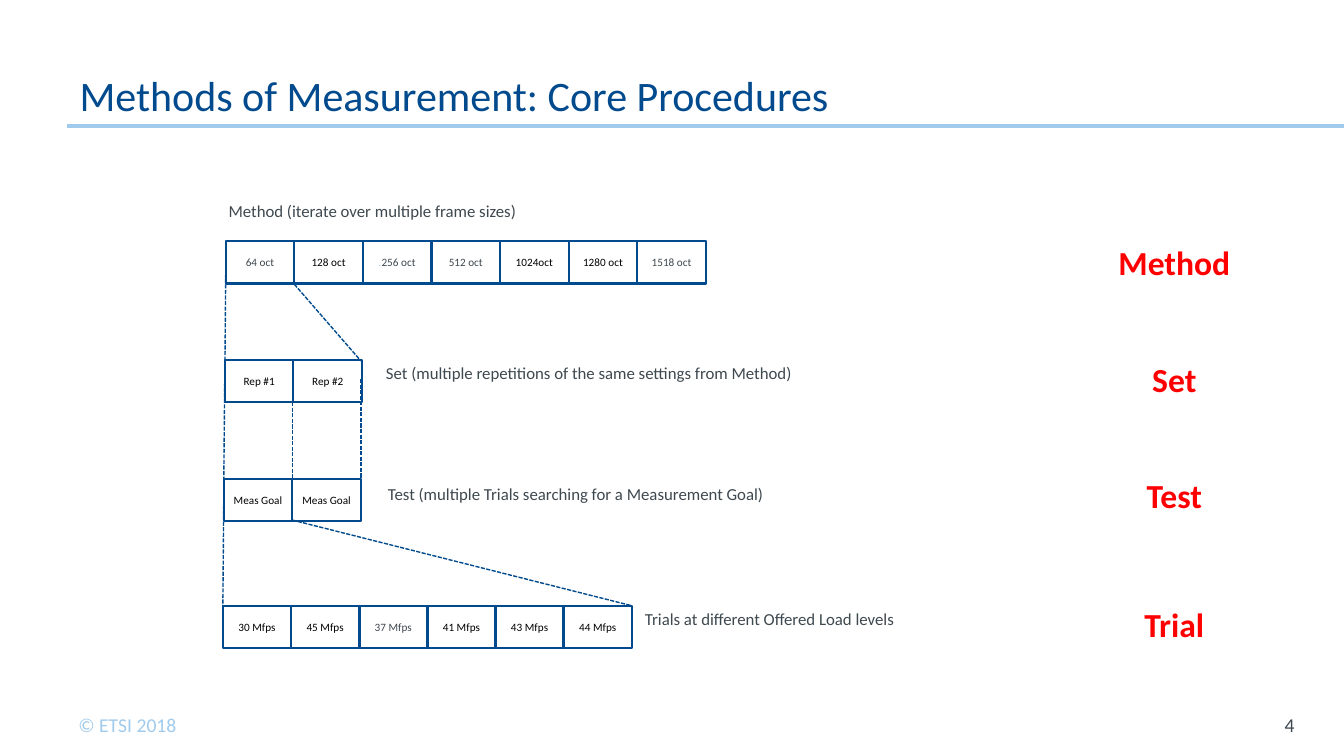
from lxml import etree
from pptx import Presentation
from pptx.dml.color import RGBColor
from pptx.enum.dml import MSO_LINE
from pptx.enum.shapes import MSO_CONNECTOR, MSO_SHAPE
from pptx.enum.text import MSO_ANCHOR, PP_ALIGN
from pptx.oxml.ns import qn
from pptx.util import Pt

LEFT, CENTER, RIGHT = PP_ALIGN.LEFT, PP_ALIGN.CENTER, PP_ALIGN.RIGHT
TOP, MIDDLE, BOTTOM = MSO_ANCHOR.TOP, MSO_ANCHOR.MIDDLE, MSO_ANCHOR.BOTTOM
RECTANGLE, STRAIGHT = MSO_SHAPE.RECTANGLE, MSO_CONNECTOR.STRAIGHT
SHORT_DASH = MSO_LINE.SQUARE_DOT

COLORS = {"navy": "004A8D", "sky": "A0CBED", "gray": "3E484F",
          "black": "000000", "red": "FF0000"}
FONT = "Calibri"
CELL_W, CELL_H = 49, 30.5
LEVEL_CENTER = 838.8

# level, label width, row left, row top, cell pitch, cells, caption, caption box
LEVELS = [
    ("Method", 95, 161.2, 172.1, 49,
     ["64 oct", "128 oct", "256 oct", "512 oct", "1024oct", "1280 oct", "1518 oct"],
     "Method (iterate over multiple frame sizes)", (156.2, 139.7, 336.2)),
    ("Set", 46.8, 160.6, 257, 49, ["Rep #1", "Rep #2"],
     "Set (multiple repetitions of the same settings from Method)",
     (268.6, 255.6, 466.6)),
    ("Test", 54.7, 159.8, 342, 49, ["Meas Goal", "Meas Goal"],
     "Test (multiple Trials searching for a Measurement Goal)",
     (270, 342, 432)),
    ("Trial", 57.6, 159.1, 432.7, 48.67,
     ["30 Mfps", "45 Mfps", "37 Mfps", "41 Mfps", "43 Mfps", "44 Mfps"],
     "Trials at different Offered Load levels", (453.6, 431.3, 298.8)),
]
LEVEL_TOPS = [169.2, 252.7, 335.5, 427.7]
GRAY_CELLS = {"64 oct", "256 oct", "512 oct", "1518 oct", "37 Mfps"}

EXPANSIONS = [
    ((161.3, 187.2), (160.6, 272.2)),
    ((210.2, 203), (257.8, 257.8)),
    ((160.6, 265), (159.8, 349.9)),
    ((208.8, 271.4), (208.8, 356.4)),
    ((257.8, 270.7), (257.8, 355.7)),
    ((159.8, 360.7), (159.1, 445.7)),
    ((208.8, 371.5), (451.4, 432.7)),
]


def rgb(name):
    return RGBColor.from_string(COLORS[name])


def write(frame, runs, size=12, bold=False, align=LEFT, anchor=TOP,
          insets=(7.2, 3.6), spacing=None, wrap=True):
    """Fill a text frame with one paragraph of (text, color) runs."""
    frame.word_wrap = wrap
    frame.vertical_anchor = anchor
    frame.margin_left = frame.margin_right = Pt(insets[0])
    frame.margin_top = frame.margin_bottom = Pt(insets[1])
    paragraph = frame.paragraphs[0]
    paragraph.alignment = align
    if spacing:
        paragraph.line_spacing = Pt(spacing)
    for text, color in runs:
        run = paragraph.add_run()
        run.text = text
        run.font.name = FONT
        run.font.size = Pt(size)
        run.font.bold = bold
        run.font.color.rgb = rgb(color)


class Board:
    """Draws styled elements on one slide."""

    def __init__(self, slide):
        self.shapes = slide.shapes

    def text(self, box, text, color="gray", **style):
        area = self.shapes.add_textbox(*map(Pt, box))
        write(area.text_frame, [(text, color)], **style)

    def cell(self, left, top, runs):
        cell = self.shapes.add_shape(
            RECTANGLE, Pt(left), Pt(top), Pt(CELL_W), Pt(CELL_H))
        cell.shadow.inherit = False
        cell.fill.background()
        cell.line.color.rgb = rgb("navy")
        cell.line.width = Pt(1.5)
        write(cell.text_frame, runs, size=8, align=CENTER, anchor=MIDDLE,
              insets=(0, 3.6))

    def line(self, start, end, color="navy", width=1, dash=None):
        line = self.shapes.add_connector(STRAIGHT, *map(Pt, start + end))
        line.line.color.rgb = rgb(color)
        line.line.width = Pt(width)
        if dash:
            line.line.dash_style = dash
        etree.SubElement(line._element.spPr, qn("a:effectLst"))


def main():
    deck = Presentation()
    deck.slide_width, deck.slide_height = Pt(960), Pt(540)
    board = Board(deck.slides.add_slide(deck.slide_layouts[6]))

    board.line((48.2, 90), (960, 90), color="sky", width=2.25)
    board.text((48.9, 505.4, 96.5, 24.5), "© ETSI 2018", "sky", size=14)
    board.text((882, 503.3, 49.7, 28.8), "4", size=14, align=RIGHT, anchor=MIDDLE)
    board.text((48.2, 21.6, 750.2, 68.4), "Methods of Measurement: Core Procedures",
               "navy", size=30, anchor=BOTTOM, insets=(8.64, 4.32), spacing=30)

    for level_top, level in zip(LEVEL_TOPS, LEVELS):
        name, width, left, top, pitch, cells, caption, (x, y, caption_w) = level
        for column, label in enumerate(cells):
            runs = [(label, "gray" if label in GRAY_CELLS else "black")]
            if label == "256 oct":
                runs.insert(0, (".", "sky"))
            board.cell(left + column * pitch, top, runs)
        board.text((x, y, caption_w, 33.1), caption)
        board.text((LEVEL_CENTER - width / 2, level_top, width, 36), name, "red",
                   size=24, bold=True, align=CENTER, wrap=False)

    for start, end in EXPANSIONS:
        board.line(start, end, dash=SHORT_DASH)

    deck.save("out.pptx")


if __name__ == "__main__":
    main()
